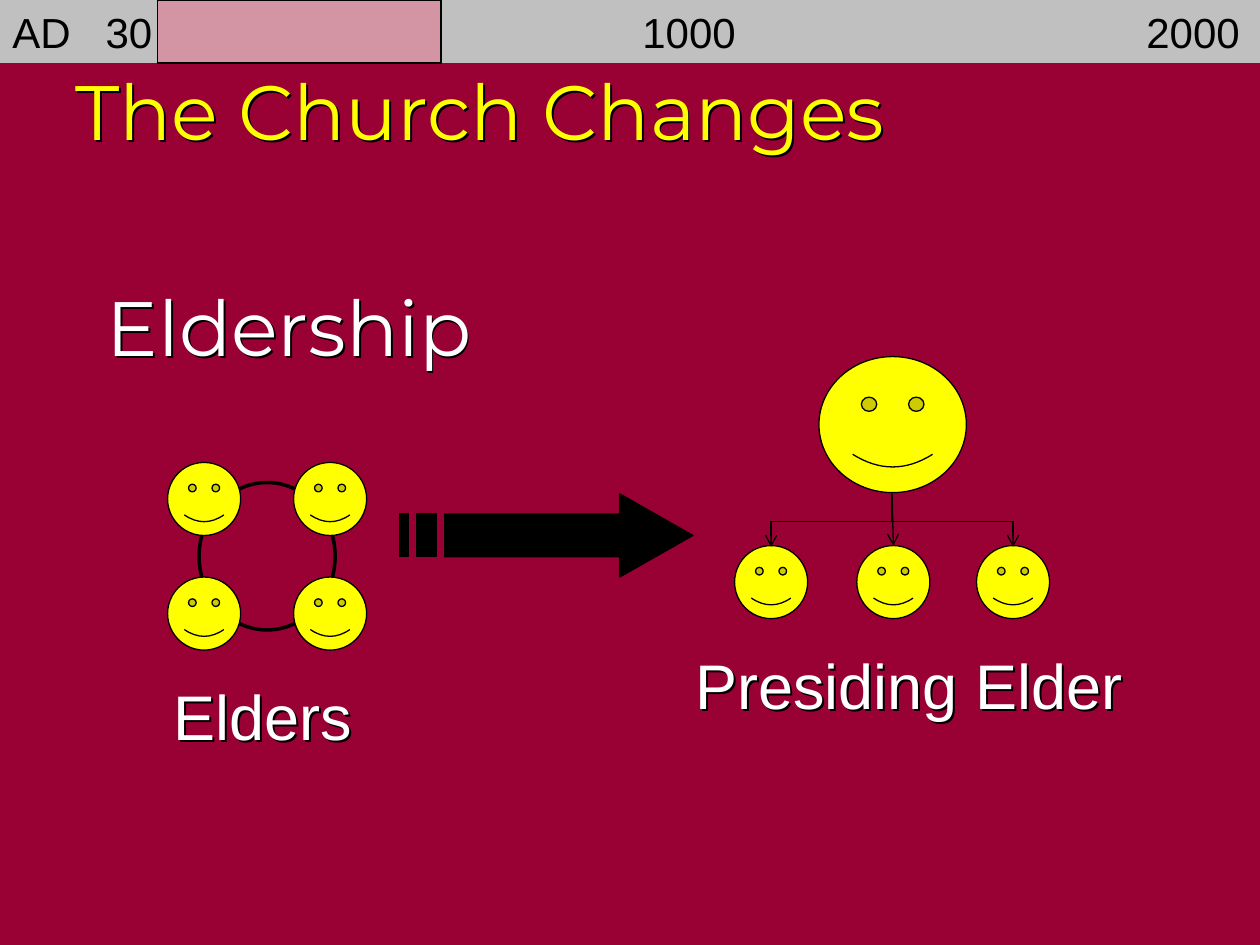
from lxml.etree import SubElement
from pptx import Presentation
from pptx.dml.color import RGBColor
from pptx.enum.shapes import MSO_CONNECTOR, MSO_SHAPE
from pptx.enum.text import MSO_ANCHOR, PP_ALIGN
from pptx.oxml.ns import qn
from pptx.util import Inches, Pt

HUES = {"back": "990033", "bar": "C0C0C0", "pink": "FF3366",
        "yellow": "FFFF00", "white": "FFFFFF", "black": "000000"}
HUES = {name: RGBColor.from_string(code) for name, code in HUES.items()}
FRAME = {"word_wrap": True, "margin_left": Inches(0.1), "margin_right": Inches(0.1),
         "margin_top": Inches(0.05), "margin_bottom": Inches(0.05)}


def paint(shape, fill=None, width=None):
    """Set fill and black outline; None leaves either one out."""
    shape.shadow.inherit = False
    if fill:
        shape.fill.solid()
        shape.fill.fore_color.rgb = HUES[fill]
    else:
        shape.fill.background()
    if width is None:
        shape.line.fill.background()
    else:
        shape.line.color.rgb = HUES["black"]
        shape.line.width = Pt(width)


def write(shape, text, size, face, hue, anchor=MSO_ANCHOR.TOP, align=PP_ALIGN.LEFT):
    frame = shape.text_frame
    for key, value in {**FRAME, "vertical_anchor": anchor}.items():
        setattr(frame, key, value)
    para = frame.paragraphs[0]
    para.alignment = align
    run = para.add_run()
    run.text = text
    run.font.size = Pt(size)
    run.font.color.rgb = HUES[hue]
    run.font.name = face


deck = Presentation()
deck.slide_width, deck.slide_height = Inches(10), Inches(7.5)
slide = deck.slides.add_slide(deck.slide_layouts[6])
slide.background.fill.solid()
slide.background.fill.fore_color.rgb = HUES["back"]
shapes = slide.shapes

# Ring of elders, then the presiding elder above three others
ring = shapes.add_shape(MSO_SHAPE.OVAL, Inches(1.58), Inches(3.83),
                        Inches(1.08), Inches(1.17))
paint(ring, width=2)

small = (0.58, 0.58)
faces = [(x, y, *small) for y in (3.67, 4.58) for x in (1.33, 2.33)]
faces += [(x, 4.33, *small) for x in (5.83, 6.8, 7.75)]
faces.append((6.5, 2.83, 1.17, 1.08))
for box in faces:
    face = shapes.add_shape(MSO_SHAPE.SMILEY_FACE, *map(Inches, box))
    paint(face, "yellow", 0.75)

# Bent links are laid out upright, then turned a quarter
links = [(MSO_CONNECTOR.ELBOW, 6.39, 3.65, 6.81, 4.61, 90),
         (MSO_CONNECTOR.STRAIGHT, 7.08, 3.92, 7.09, 4.33, 0),
         (MSO_CONNECTOR.ELBOW, 7.77, 3.65, 7.35, 4.61, 270)]
for kind, *ends, turn in links:
    link = shapes.add_connector(kind, *map(Inches, ends))
    link.line.color.rgb = HUES["black"]
    link.line.width = Pt(0.75)
    props = link._element.spPr
    if turn:
        props.find(qn("a:xfrm")).set("rot", str(turn * 60000))
        guides = props.find(qn("a:prstGeom")).get_or_add_avLst()
        SubElement(guides, qn("a:gd"), name="adj1", fmla="val 52700")
    SubElement(link.line._get_or_add_ln(), qn("a:tailEnd"), type="arrow")
    SubElement(props, qn("a:effectLst"))

# Striped arrow
top, low = 4.08, 4.42
parts = [[(3.53, top), (4.92, top), (4.92, 3.92), (5.5, 4.25),
          (4.92, 4.58), (4.92, low), (3.53, low)]]
for left, right in ((3.17, 3.24), (3.31, 3.46)):
    parts.append([(left, top), (right, top), (right, low), (left, low)])
parts = [[(Inches(x), Inches(y)) for x, y in part] for part in parts]
pen = shapes.build_freeform(*parts[0][0])
for step, part in enumerate(parts):
    if step:
        pen.move_to(*part[0])
    pen.add_line_segments(part[1:], close=True)
paint(pen.convert_to_shape(), "black", 0.75)

# Title, heading and captions, each with a drop shadow
labels = [
    ("The Church Changes", (0.5, 0.45, 8.5, 0.84), 44, "Montserrat", "yellow",
     {"anchor": MSO_ANCHOR.MIDDLE}),
    ("Eldership", (0.75, 2.17, 4.08, 0.92), 44, "Montserrat", "white", {}),
    ("Presiding Elder", (5.42, 5.08, 4, 0.66), 36, "Arial", "white", {}),
    ("Elders", (1, 5.33, 2.17, 0.66), 36, "Arial", "white",
     {"align": PP_ALIGN.CENTER}),
]
for text, box, size, font, hue, extra in labels:
    label = shapes.add_textbox(*map(Inches, box))
    write(label, text, size, font, hue, **extra)
    effect = SubElement(label._element.spPr, qn("a:effectLst"))
    drop = SubElement(effect, qn("a:outerShdw"), dist="20000", dir="2700000")
    SubElement(drop, qn("a:srgbClr"), val=str(HUES["black"]))

# Time bar with the marked span
bar = shapes.add_shape(MSO_SHAPE.RECTANGLE, 0, 0, Inches(10), Inches(0.5))
paint(bar, "bar")
write(bar, "AD\t30\t1000\t2000", 24, "Arial", "black")
stops = SubElement(bar.text_frame.paragraphs[0]._p.get_or_add_pPr(), qn("a:tabLst"))
for stop in (0.74, 5, 9):
    SubElement(stops, qn("a:tab"), pos=str(Inches(stop)), algn="l")

span = shapes.add_shape(MSO_SHAPE.RECTANGLE, Inches(1.25), 0, Inches(2.25), Inches(0.5))
paint(span, "pink", 0)
tint = span._element.spPr.find(qn("a:solidFill")).find(qn("a:srgbClr"))
SubElement(tint, qn("a:alpha"), val="30000")

deck.save("out.pptx")
